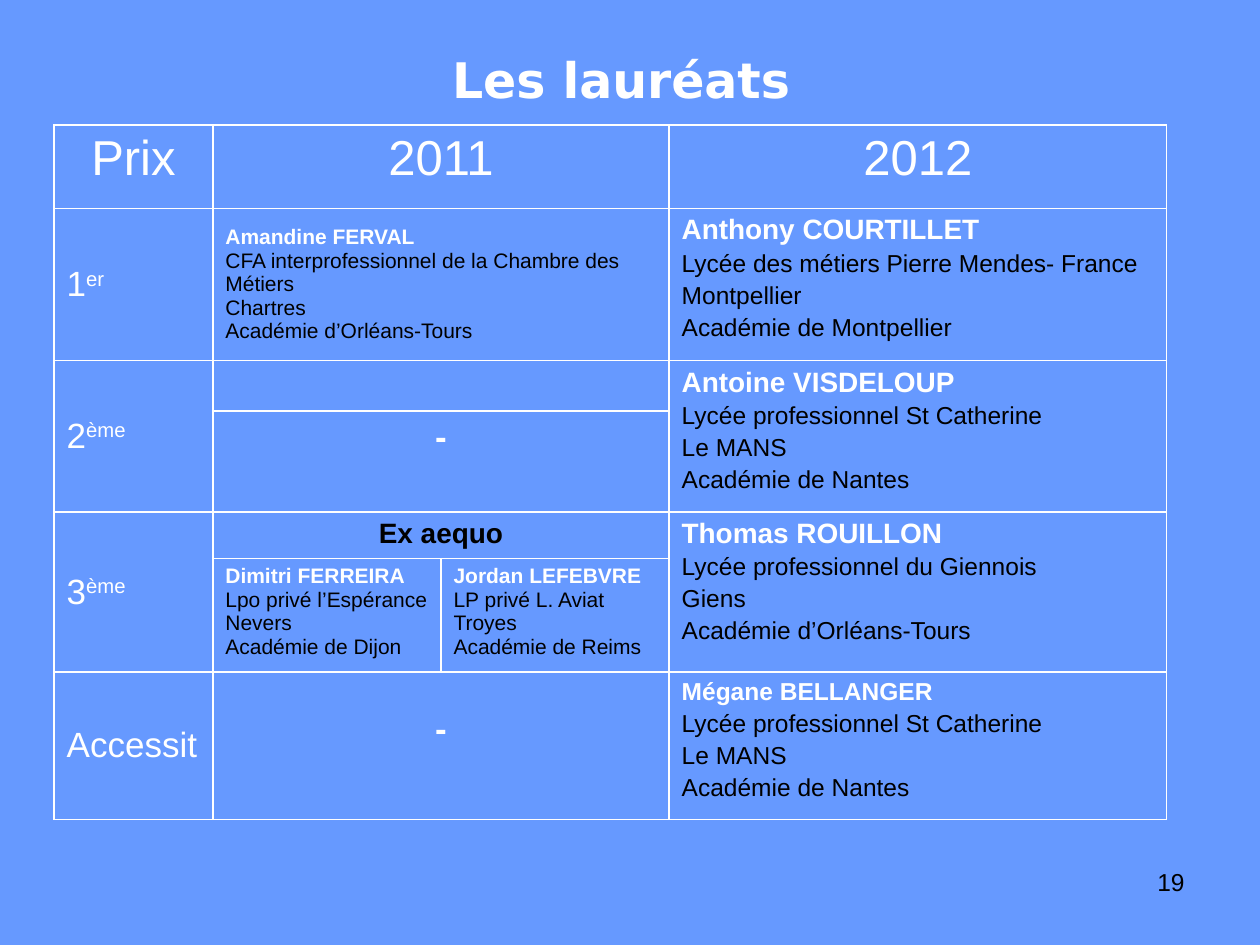
from lxml.etree import SubElement
from pptx import Presentation
from pptx.dml.color import RGBColor
from pptx.enum.text import MSO_ANCHOR as Anchor, PP_ALIGN as Align
from pptx.oxml.ns import qn
from pptx.util import Cm, Pt

BLUE = RGBColor(0x66, 0x99, 0xFF)
WHITE = RGBColor(0xFF, 0xFF, 0xFF)
BLACK = RGBColor(0, 0, 0)

COLUMNS = [3.2, 4.6, 4.6, 10.03]
ROWS = [1.68, 3.07, 1.02, 2.03, 0.94, 2.29, 2.97]
# First row, first column, last row, last column
MERGES = [(0, 1, 0, 2), (1, 1, 1, 2), (2, 0, 3, 0), (2, 1, 2, 2), (2, 3, 3, 3),
          (3, 1, 3, 2), (4, 0, 5, 0), (4, 1, 4, 2), (4, 3, 5, 3), (6, 1, 6, 2)]

HEADINGS = {0: "Prix", 1: "2011", 3: "2012"}
RANKS = {1: ("1", "er"), 2: ("2", "ème"), 4: ("3", "ème"), 6: ("Accessit", "")}
# (row, column): name and school lines
WINNERS_2011 = {
    (1, 1): ["Amandine FERVAL", "CFA interprofessionnel de la Chambre des Métiers",
             "Chartres", "Académie d’Orléans-Tours"],
    (5, 1): ["Dimitri FERREIRA", "Lpo privé l’Espérance", "Nevers", "Académie de Dijon"],
    (5, 2): ["Jordan LEFEBVRE", "LP privé L. Aviat", "Troyes", "Académie de Reims"],
}
# row: name size, then name and school lines
WINNERS_2012 = {
    1: (16, ["Anthony COURTILLET", "Lycée des métiers Pierre Mendes- France",
             "Montpellier", "Académie de Montpellier"]),
    2: (16, ["Antoine VISDELOUP", "Lycée professionnel St Catherine",
             "Le MANS", "Académie de Nantes"]),
    4: (16, ["Thomas ROUILLON", "Lycée professionnel du Giennois",
             "Giens", "Académie d’Orléans-Tours"]),
    6: (14, ["Mégane BELLANGER", "Lycée professionnel St Catherine",
             "Le MANS", "Académie de Nantes"]),
}


class SlideBuilder:
    def __init__(self, page, font="Arial", title_font="DejaVu Sans"):
        self.page = page
        self.font = font
        self.title_font = title_font
        page.background.fill.solid()
        page.background.fill.fore_color.rgb = BLUE

    def style(self, para, size, color, bold=False, align=Align.LEFT, font=None):
        para.alignment = align
        para.font.name = font or self.font
        para.font.size = Pt(size)
        para.font.bold = bold
        para.font.color.rgb = color

    def title(self, text, left, top, width, height):
        box = self.page.shapes.title
        box.left, box.top, box.width, box.height = map(Cm, (left, top, width, height))
        box.text_frame.text = text
        box.text_frame.vertical_anchor = Anchor.MIDDLE
        self.style(box.text_frame.paragraphs[0], 28, WHITE, True, Align.CENTER,
                   self.title_font)

    def text(self, text, left, top, width, height, size, align):
        box = self.page.shapes.add_textbox(*map(Cm, (left, top, width, height)))
        box.text_frame.word_wrap = True
        box.text_frame.text = text
        self.style(box.text_frame.paragraphs[0], size, BLACK, align=align)

    def table(self, left, top, columns, rows, merges):
        table = self.page.shapes.add_table(
            len(rows), len(columns), Cm(left), Cm(top),
            Cm(sum(columns)), Cm(sum(rows))).table
        table.first_row = table.horz_banding = False
        for column, width in zip(table.columns, columns):
            column.width = Cm(width)
        for row, height in zip(table.rows, rows):
            row.height = Cm(height)
        for cell in table.iter_cells():
            self.borders(cell)
            cell.fill.background()
            self.style(cell.text_frame.paragraphs[0], 12, WHITE)
        for row, column, last_row, last_column in merges:
            table.cell(row, column).merge(table.cell(last_row, last_column))
        return table

    def borders(self, cell):
        properties = cell._tc.get_or_add_tcPr()
        for side in ("a:lnL", "a:lnR", "a:lnT", "a:lnB"):
            line = SubElement(properties, qn(side), w=str(Pt(1)))
            fill = SubElement(line, qn("a:solidFill"))
            SubElement(fill, qn("a:srgbClr"), val=str(WHITE))

    def label(self, cell, text, size, color=WHITE, bold=False):
        cell.text_frame.text = text
        self.style(cell.text_frame.paragraphs[0], size, color, bold, Align.CENTER)

    def rank(self, cell, text, suffix):
        cell.vertical_anchor = Anchor.MIDDLE
        para = cell.text_frame.paragraphs[0]
        self.style(para, 20, WHITE)
        para.add_run().text = text
        if suffix:
            span = para.add_run()
            span.text = suffix
            span._r.get_or_add_rPr().set("baseline", "30000")

    def winner(self, cell, lines, name_size, size, gap=0):
        cell.text_frame.text = "\n".join(lines)
        name, *school = cell.text_frame.paragraphs
        self.style(name, name_size, WHITE, True)
        for para in school:
            self.style(para, size, BLACK)
            para.space_before = Pt(gap)


def main():
    deck = Presentation()
    deck.slide_width, deck.slide_height = Cm(25.4), Cm(19.05)
    builder = SlideBuilder(deck.slides.add_slide(deck.slide_layouts[5]))
    builder.title("Les lauréats", 1.09, 0, 22.86, 3.18)

    # Prize table: headings and ranks
    table = builder.table(1.09, 2.52, COLUMNS, ROWS, MERGES)
    for column, heading in HEADINGS.items():
        builder.label(table.cell(0, column), heading, 28)
    for row, (rank, suffix) in RANKS.items():
        builder.rank(table.cell(row, 0), rank, suffix)

    # Winners by year
    for (row, column), lines in WINNERS_2011.items():
        builder.winner(table.cell(row, column), lines, 12, 12)
    table.cell(1, 1).vertical_anchor = Anchor.MIDDLE
    for row, (name_size, lines) in WINNERS_2012.items():
        builder.winner(table.cell(row, 3), lines, name_size, 14, gap=2.5)

    # Shared third prize and prizes not awarded
    builder.label(table.cell(4, 1), "Ex aequo", 16, BLACK, True)
    for row in (3, 6):
        builder.label(table.cell(row, 1), "-", 20, bold=True)
    table.cell(6, 1).margin_top = Cm(0.75)

    # Page number
    builder.text("19", 18.21, 17.35, 5.92, 1.32, 14, Align.RIGHT)
    deck.save("out.pptx")


if __name__ == "__main__":
    main()
